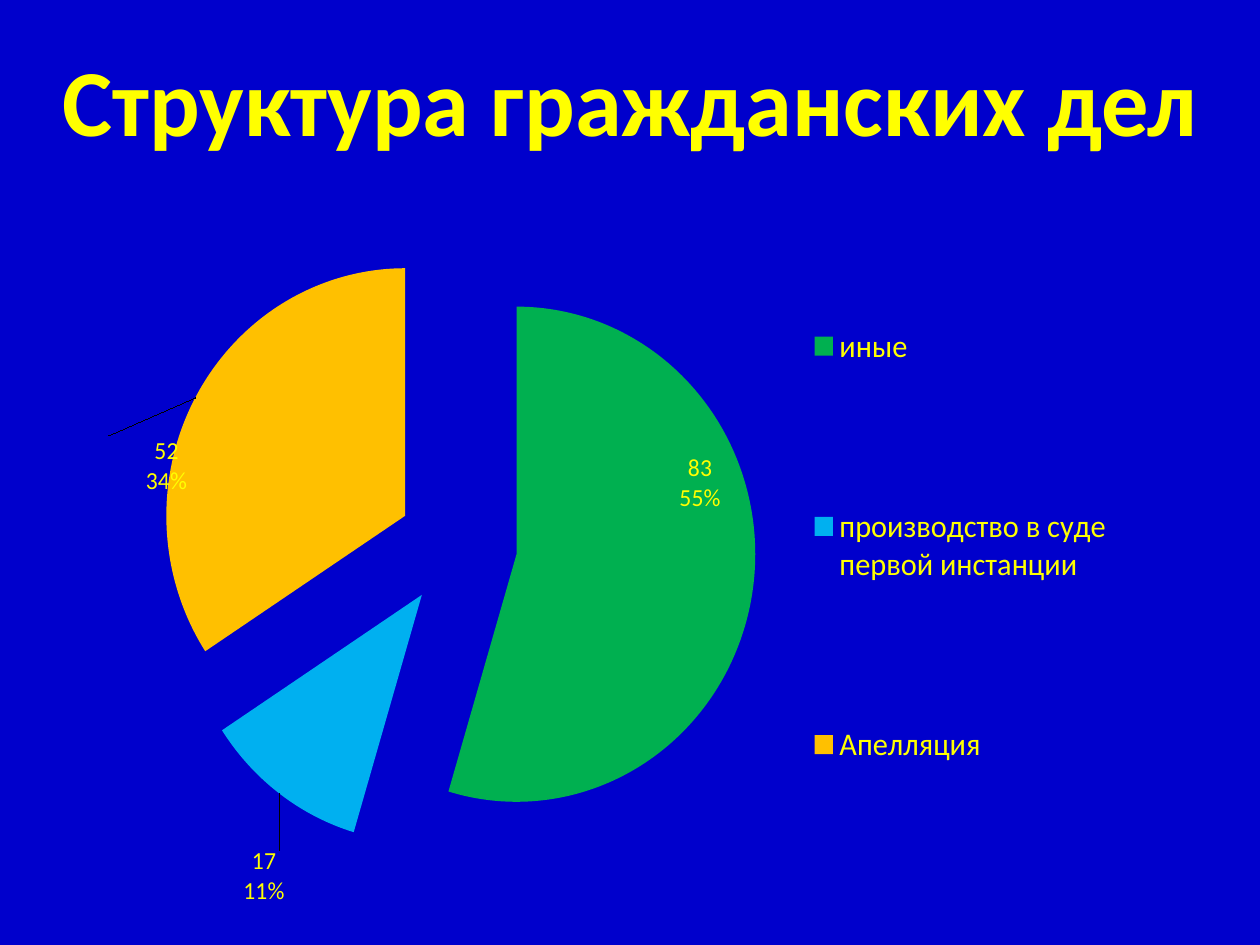
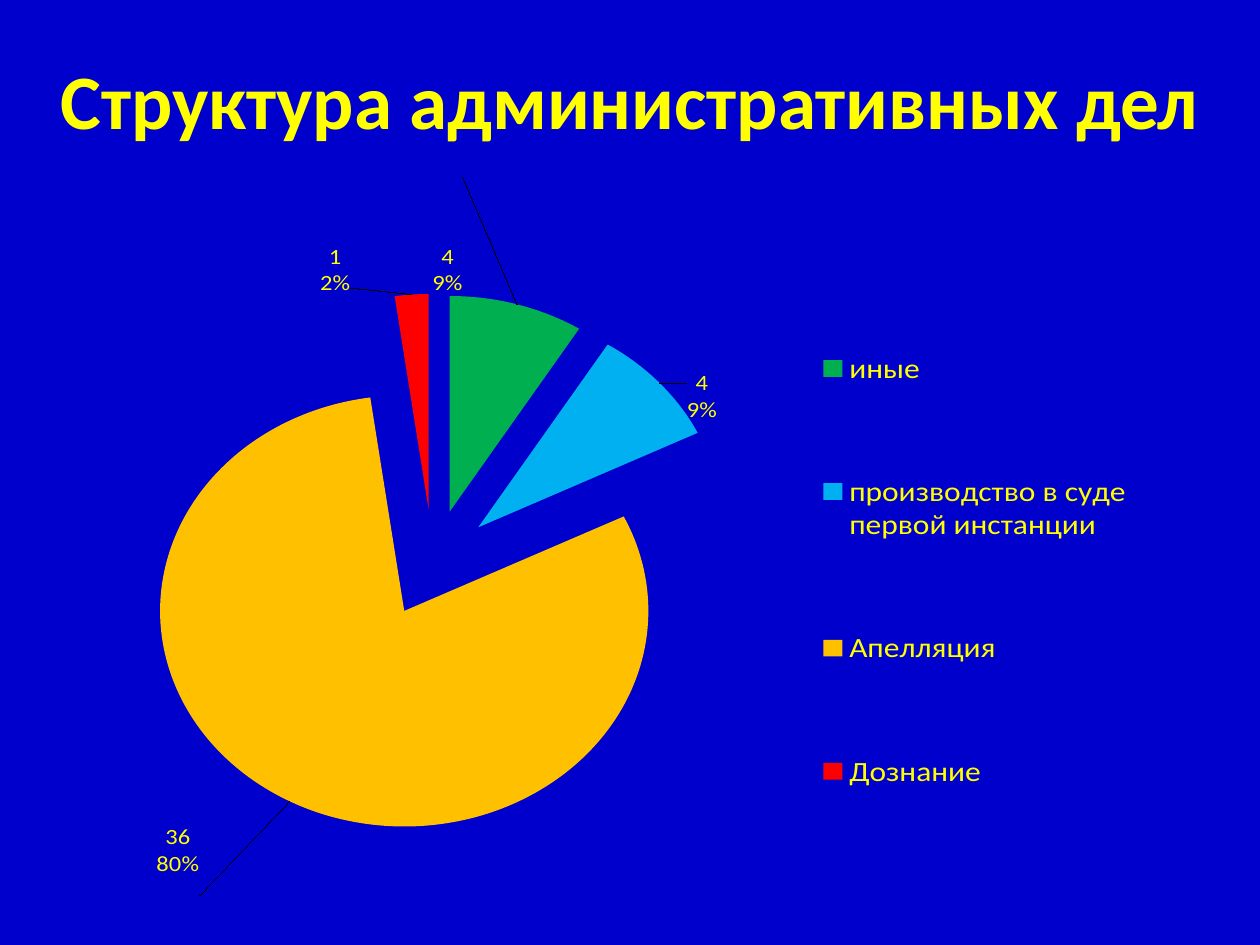
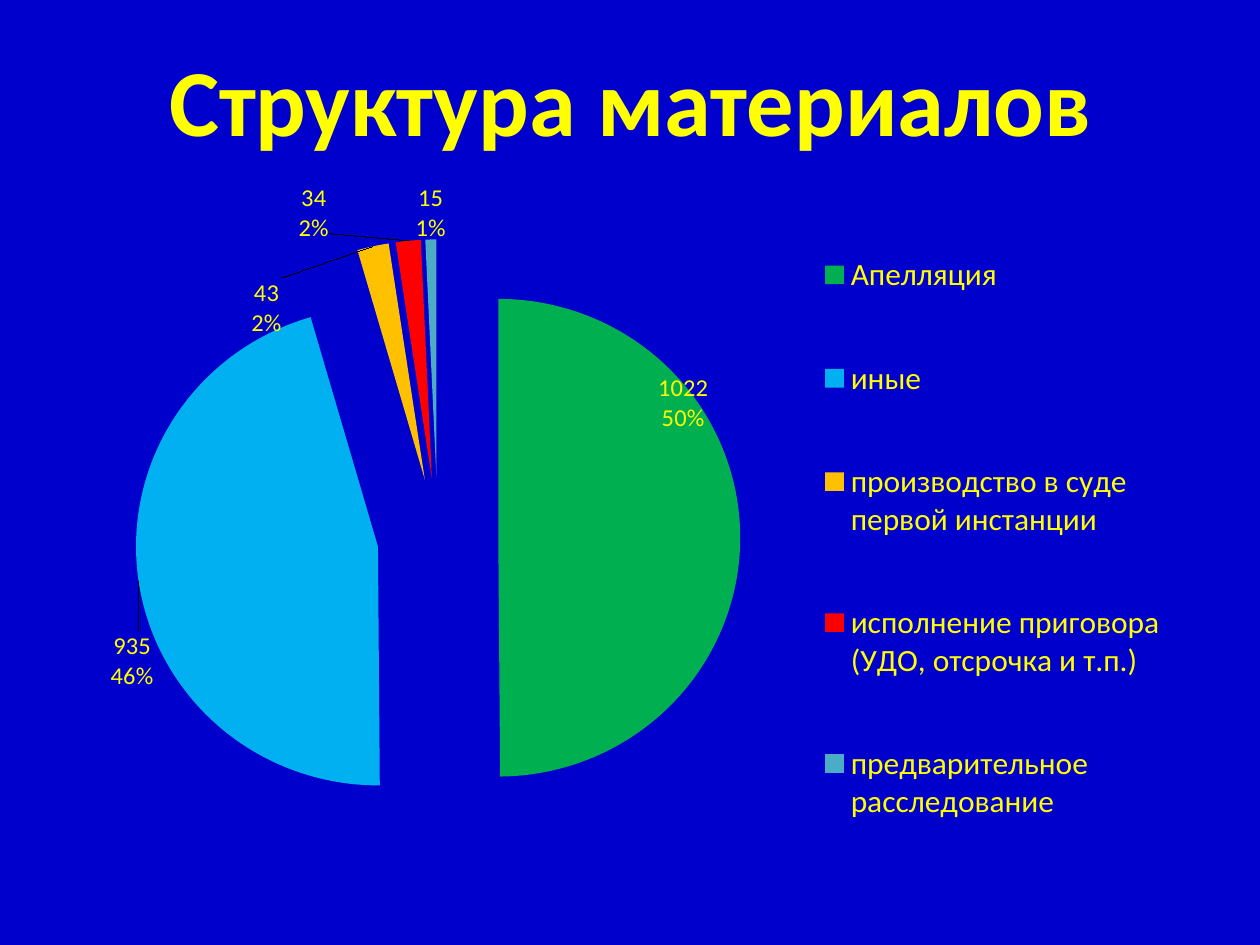
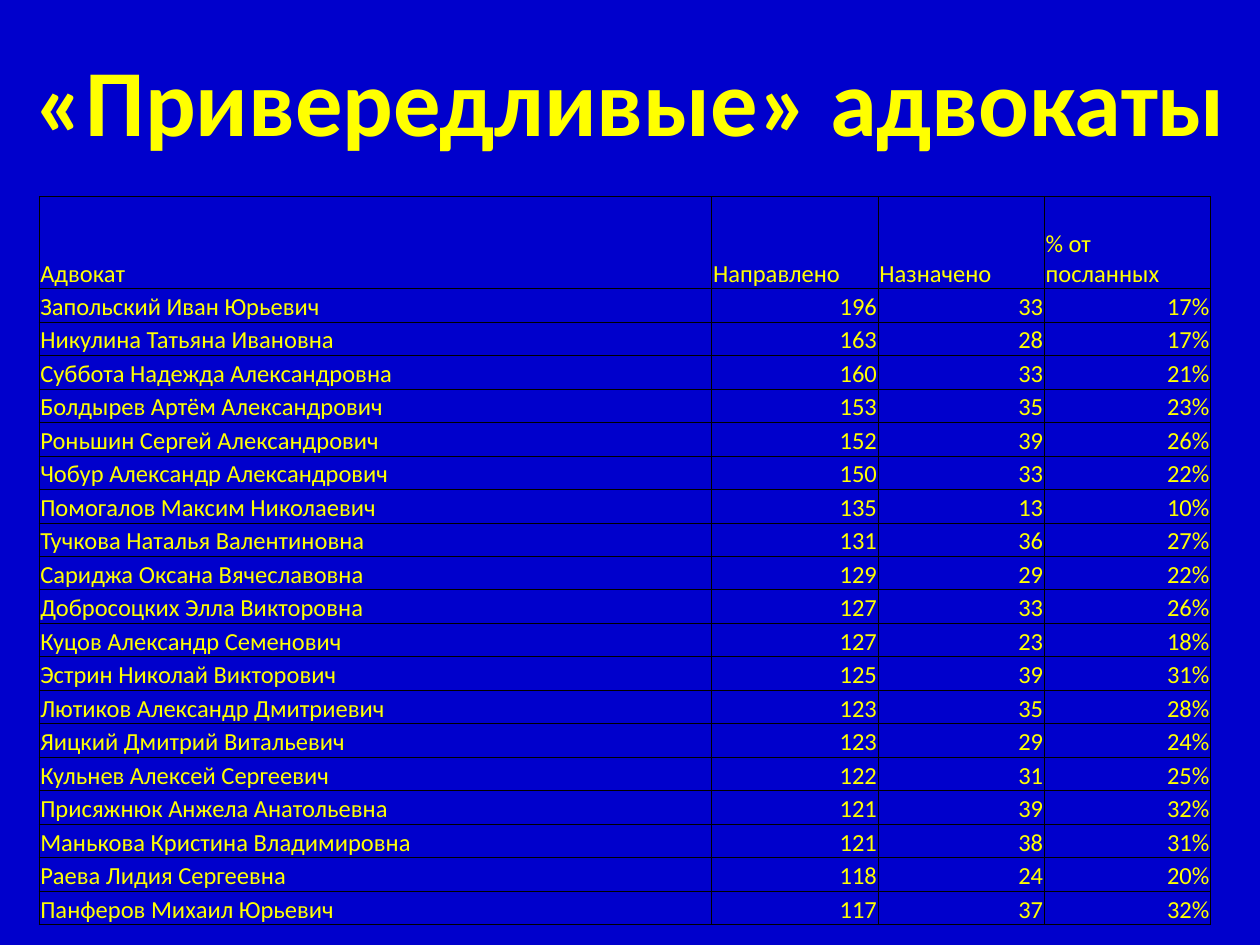
import pptx
import pptx.util
import pptx.chart.data
import pptx.dml.color
import pptx.enum.chart
import pptx.enum.text
import pptx.oxml

Inches, Pt = pptx.util.Inches, pptx.util.Pt
ALIGN = pptx.enum.text.PP_ALIGN
ANCHOR = pptx.enum.text.MSO_ANCHOR
NS = 'xmlns:c="http://schemas.openxmlformats.org/drawingml/2006/chart"'
NSA = 'xmlns:a="http://schemas.openxmlformats.org/drawingml/2006/main"'
BACK, TEXT, LINE = "0000CC", "FFFF00", "000000"
HUES = ["00B050", "00B0F0", "FFC000", "FF0000", "4BACC6"]
color = pptx.dml.color.RGBColor.from_string


def style(font, size, bold=False, hue=TEXT):
    values = {"name": "Calibri", "size": Pt(size), "bold": bold}
    for key, value in values.items():
        setattr(font, key, value)
    font.color.rgb = color(hue)


def layout(inner="", **parts):
    tags = "".join(f'<c:{key} val="{value}"/>' for key, value in parts.items())
    return pptx.oxml.parse_xml(
        f"<c:layout {NS}><c:manualLayout>{inner}{tags}</c:manualLayout></c:layout>")


OTHER, FIRST, APPEAL = "иные", "производство в суде первой инстанции", "Апелляция"
pies = [
    {"title": "Структура гражданских дел", "size": 54,
     "box": (0.86, 1.41, 8.28, 5.78), "legend": (0.64, 0.01, 0.34, 0.99),
     "data": {OTHER: 83, FIRST: 17, APPEAL: 52},
     "shifts": [(-0.08, -0.19), (0.01, 0.07), (-0.08, 0.14)]},
    {"title": "Структура административных дел", "size": 44,
     "box": (0.77, 1.41, 8.6, 5.7), "legend": (0.64, 0.03, 0.34, 0.97),
     "data": {OTHER: 4, FIRST: 4, APPEAL: 36, "Дознание": 1},
     "shifts": [(-0.08, -0.19), (0.02, 0.07), (-0.08, 0.14), (-0.07, 0)]},
    {"title": "Структура материалов", "size": 54,
     "box": (0.7, 1.37, 8.91, 5.66), "legend": (0.63, 0.01, 0.35, 0.99),
     "data": {APPEAL: 1022, OTHER: 935, FIRST: 43,
              "исполнение приговора (УДО, отсрочка и т.п.)": 34,
              "предварительное расследование": 15},
     "shifts": [(-0.08, -0.19), (0.02, 0.07), (-0.08, 0.14), (-0.07, 0)]},
]
heads = ["Адвокат", "Направлено", "Назначено", "% от посланных"]
people = [
    ("Запольский Иван Юрьевич", 196, 33),
    ("Никулина Татьяна Ивановна", 163, 28),
    ("Суббота Надежда Александровна", 160, 33),
    ("Болдырев Артём Александрович", 153, 35),
    ("Роньшин Сергей Александрович", 152, 39),
    ("Чобур Александр Александрович", 150, 33),
    ("Помогалов Максим Николаевич", 135, 13),
    ("Тучкова Наталья Валентиновна", 131, 36),
    ("Сариджа Оксана Вячеславовна", 129, 29),
    ("Добросоцких Элла Викторовна", 127, 33),
    ("Куцов Александр Семенович", 127, 23),
    ("Эстрин Николай Викторович", 125, 39),
    ("Лютиков Александр Дмитриевич", 123, 35),
    ("Яицкий Дмитрий Витальевич", 123, 29),
    ("Кульнев Алексей Сергеевич", 122, 31),
    ("Присяжнюк Анжела Анатольевна", 121, 39),
    ("Манькова Кристина Владимировна", 121, 38),
    ("Раева Лидия Сергеевна", 118, 24),
    ("Панферов Михаил Юрьевич", 117, 37),
]

deck = pptx.Presentation()
deck.slide_width, deck.slide_height = Inches(10), Inches(7.5)
titles = [(pie["title"], pie["size"]) for pie in pies]
titles.append(("«Привередливые» адвокаты", 54))
for title, size in titles:
    slide = deck.slides.add_slide(deck.slide_layouts[6])
    slide.background.fill.solid()
    slide.background.fill.fore_color.rgb = color(BACK)
    frame = slide.shapes.add_textbox(
        Inches(0.16), Inches(0.31), Inches(9.69), Inches(0.94)).text_frame
    frame.word_wrap = True
    frame.vertical_anchor = ANCHOR.MIDDLE
    para = frame.paragraphs[0]
    para.alignment = ALIGN.CENTER
    run = para.add_run()
    run.text = title
    style(run.font, size, True)

for slide, pie in zip(deck.slides, pies):
    data = pptx.chart.data.CategoryChartData(number_format="0")
    data.categories = list(pie["data"])
    data.add_series("Series 1", list(pie["data"].values()))
    chart = slide.shapes.add_chart(
        pptx.enum.chart.XL_CHART_TYPE.PIE, *map(Inches, pie["box"]), data).chart
    style(chart.font, 10, hue=LINE)
    chart.has_title = False
    chart.has_legend = True
    legend = chart.legend
    legend.position = pptx.enum.chart.XL_LEGEND_POSITION.RIGHT
    legend.include_in_layout = False
    style(legend.font, 18)
    modes = '<c:xMode val="edge"/><c:yMode val="edge"/>'
    x, y, w, h = pie["legend"]
    for old in legend._element.xpath("c:layout"):
        legend._element.remove(old)
    legend._element.xpath("c:legendPos")[0].addnext(layout(modes, x=x, y=y, w=w, h=h))
    area = chart._chartSpace.xpath(".//c:plotArea")[0]
    for old in area.xpath("c:layout"):
        area.remove(old)
    area.insert(0, layout('<c:layoutTarget val="inner"/>' + modes,
                          x=0, y=0.08, w=0.62, h=0.85))

    plot = chart.plots[0]
    plot.vary_by_categories = True
    series = plot.series[0]
    for i, hue in enumerate(HUES[:len(pie["data"])]):
        fill = series.points[i].format.fill
        fill.solid()
        fill.fore_color.rgb = color(hue)
    burst = f'<c:explosion {NS} val="25"/>'
    series._element.xpath("c:dPt")[0].addprevious(pptx.oxml.parse_xml(burst))
    for props in series._element.xpath("c:dPt/c:spPr"):
        props.addprevious(pptx.oxml.parse_xml(burst))
    labels = series.data_labels
    for key in ("show_value", "show_percentage"):
        setattr(labels, key, True)
    style(labels.font, 14)
    for i, (x, y) in enumerate(pie["shifts"]):
        style(series.points[i].data_label.font, 14)
        label = series._element.xpath(f".//c:dLbl[c:idx/@val='{i}']")[0]
        label.xpath("c:idx")[0].addnext(layout(x=x, y=y))
        label.xpath("c:showPercent")[0].set("val", "1")
    for share in series._element.xpath(".//c:dLbls//c:showPercent"):
        after = share.xpath("following-sibling::c:showBubbleSize")
        (after[0] if after else share).addnext(
            pptx.oxml.parse_xml(f"<c:separator {NS}>\n</c:separator>"))
    for lead in series._element.xpath("c:dLbls/c:showLeaderLines"):
        lead.set("val", "1")

rows = [heads] + [(name, sent, took, f"{took / sent:.0%}") for name, sent, took in people]
table = deck.slides[3].shapes.add_table(
    len(rows), 4, Inches(0.31), Inches(1.56), Inches(9.3), Inches(5.78)).table
for flag in ("first_row", "horz_banding"):
    setattr(table, flag, False)
for col, width in zip(table.columns, (5.34, 1.32, 1.32, 1.32)):
    col.width = Inches(width)
for r, row in enumerate(rows):
    table.rows[r].height = Inches((5.78 - 0.73) / len(people) if r else 0.73)
    for c, value in enumerate(row):
        cell = table.cell(r, c)
        formats = {"margin_left": Inches(0.01), "margin_right": Inches(0.01),
                   "margin_top": Inches(0.01), "margin_bottom": 0,
                   "vertical_anchor": ANCHOR.BOTTOM}
        for key, item in formats.items():
            setattr(cell, key, item)
        para = cell.text_frame.paragraphs[0]
        para.alignment = ALIGN.RIGHT if r and c else ALIGN.LEFT
        run = para.add_run()
        run.text = str(value)
        style(run.font, 14)
        props = cell._tc.get_or_add_tcPr()
        for side in "LRTB":
            props.append(pptx.oxml.parse_xml(
                f'<a:ln{side} {NSA} w="{Pt(0.5)}"><a:solidFill>'
                f'<a:srgbClr val="{LINE}"/></a:solidFill></a:ln{side}>'))
        cell.fill.background()

deck.save("out.pptx")
